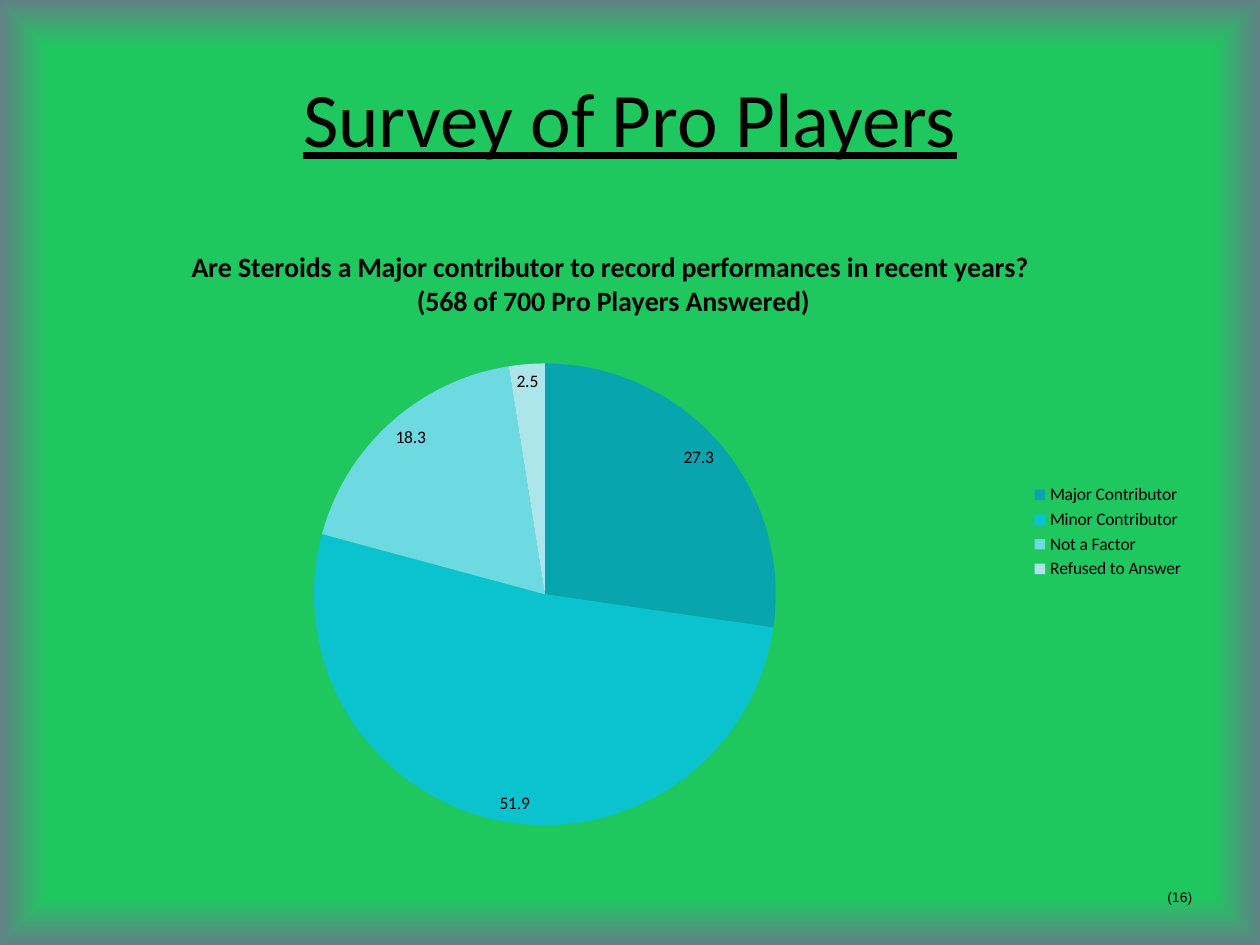
from dataclasses import dataclass

from pptx import Presentation
from pptx import util as u
from pptx.chart.data import CategoryChartData
from pptx.dml.color import RGBColor
from pptx.enum import chart as charts, text
from pptx.oxml import parse_xml
from pptx.oxml.ns import nsdecls, qn

PX_PER_INCH = 126
RESPONSES = {
    "Major Contributor": 27.3,
    "Minor Contributor": 51.9,
    "Not a Factor": 18.3,
    "Refused to Answer": 2.5,
}
QUESTION = (
    "Are Steroids a Major contributor to record performances in recent years? \n"
    "(568 of 700 Pro Players Answered)"
)


@dataclass(frozen=True)
class Theme:
    """Hold the colours, fonts and type sizes."""

    ink: str = "000000"
    field: str = "1FC75F"
    edge: str = "618287"
    slices: tuple = ("08A5AF", "0BC3CF", "6DD9E0", "ADE6EA")
    main_font: str = "Calibri"
    note_font: str = "Arial"
    title_size: int = 44
    question_size: int = 16
    label_size: int = 10
    note_size: int = 8


THEME = Theme()


def px(length):
    """Turn pixels into EMU."""
    return u.Emu(round(length * 914400 / PX_PER_INCH))


def style(font, size, name=THEME.main_font):
    """Give a font its face, size and colour."""
    font.name = name
    font.size = u.Pt(size)
    font.color.rgb = RGBColor.from_string(THEME.ink)


def paint_background(slide):
    """Fill the slide with a gradient that darkens at its edges."""
    slide.background.fill.gradient()
    gradient = slide.element.find(".//" + qn("a:gradFill"))
    stops = "".join(
        f'<a:gs pos="{position}"><a:srgbClr val="{colour}"/></a:gs>'
        for position, colour in ((90000, THEME.field), (100000, THEME.edge))
    )
    gradient.getparent().replace(gradient, parse_xml(
        f'<a:gradFill {nsdecls("a")} rotWithShape="1"><a:gsLst>{stops}</a:gsLst>'
        '<a:path path="shape"><a:fillToRect l="50000" t="50000" r="50000" b="50000"/>'
        '</a:path></a:gradFill>'
    ))


def add_heading(slide, left, top, width, height):
    """Place the underlined slide title."""
    heading = slide.shapes.title
    heading.left, heading.top = px(left), px(top)
    heading.width, heading.height = px(width), px(height)
    frame = heading.text_frame
    frame.text = "Survey of Pro Players"
    frame.vertical_anchor = text.MSO_ANCHOR.MIDDLE
    line = frame.paragraphs[0]
    line.alignment = text.PP_ALIGN.CENTER
    style(line.runs[0].font, THEME.title_size)
    line.runs[0].font.underline = True


def set_layout(part, after, **settings):
    """Fix the place of a chart part, in fractions of the chart."""
    for old in part.findall(qn("c:layout")):
        part.remove(old)
    values = "".join(f'<c:{key} val="{value}"/>' for key, value in settings.items())
    layout = parse_xml(
        f'<c:layout {nsdecls("c")}><c:manualLayout>{values}</c:manualLayout></c:layout>'
    )
    if after is None:
        part.insert(0, layout)
    else:
        part.find(qn(after)).addnext(layout)


def add_survey_pie(slide, left, top, width, height):
    """Place the pie chart with its question, labels and legend."""
    survey = CategoryChartData()
    survey.categories = list(RESPONSES)
    survey.add_series("Series 1", list(RESPONSES.values()))
    pie = slide.shapes.add_chart(
        charts.XL_CHART_TYPE.PIE, px(left), px(top), px(width), px(height), survey
    ).chart
    style(pie.font, THEME.label_size)

    pie.has_title = True
    question = pie.chart_title.text_frame
    question.text = QUESTION
    for line in question.paragraphs:
        style(line.runs[0].font, THEME.question_size)
        line.runs[0].font.bold = True

    pie.has_legend = True
    pie.legend.position = charts.XL_LEGEND_POSITION.RIGHT
    pie.legend.include_in_layout = False

    plot = pie.plots[0]
    plot.vary_by_categories = True
    plot.has_data_labels = True
    plot.data_labels.show_value = True
    plot.data_labels.show_percentage = False
    plot.data_labels.position = charts.XL_LABEL_POSITION.INSIDE_END
    style(plot.data_labels.font, THEME.label_size)
    for index, colour in enumerate(THEME.slices):
        wedge = plot.series[0].points[index].format
        wedge.fill.solid()
        wedge.fill.fore_color.rgb = RGBColor.from_string(colour)
        wedge.line.fill.background()

    root = pie.element
    set_layout(root.find(".//" + qn("c:title")), "c:tx",
               xMode="edge", yMode="edge", x=0.11, y=0.04)
    set_layout(root.find(".//" + qn("c:plotArea")), None, layoutTarget="inner",
               xMode="edge", yMode="edge", x=0.22, y=0.23, w=0.41, h=0.74)


def add_citation(slide, left, top, width, height):
    """Place the source number in the corner."""
    citation = slide.shapes.add_textbox(px(left), px(top), px(width), px(height))
    frame = citation.text_frame
    frame.word_wrap = True
    frame.text = "(16)"
    style(frame.paragraphs[0].runs[0].font, THEME.note_size, THEME.note_font)


def main():
    """Build the survey slide and save it."""
    deck = Presentation()
    deck.slide_width, deck.slide_height = px(1260), px(945)
    slide = deck.slides.add_slide(deck.slide_layouts[5])
    paint_background(slide)
    add_heading(slide, 63, 38, 1134, 158)
    add_survey_pie(slide, 63, 220, 1134, 624)
    add_citation(slide, 1155, 882, 63, 30)
    deck.save("out.pptx")


if __name__ == "__main__":
    main()
